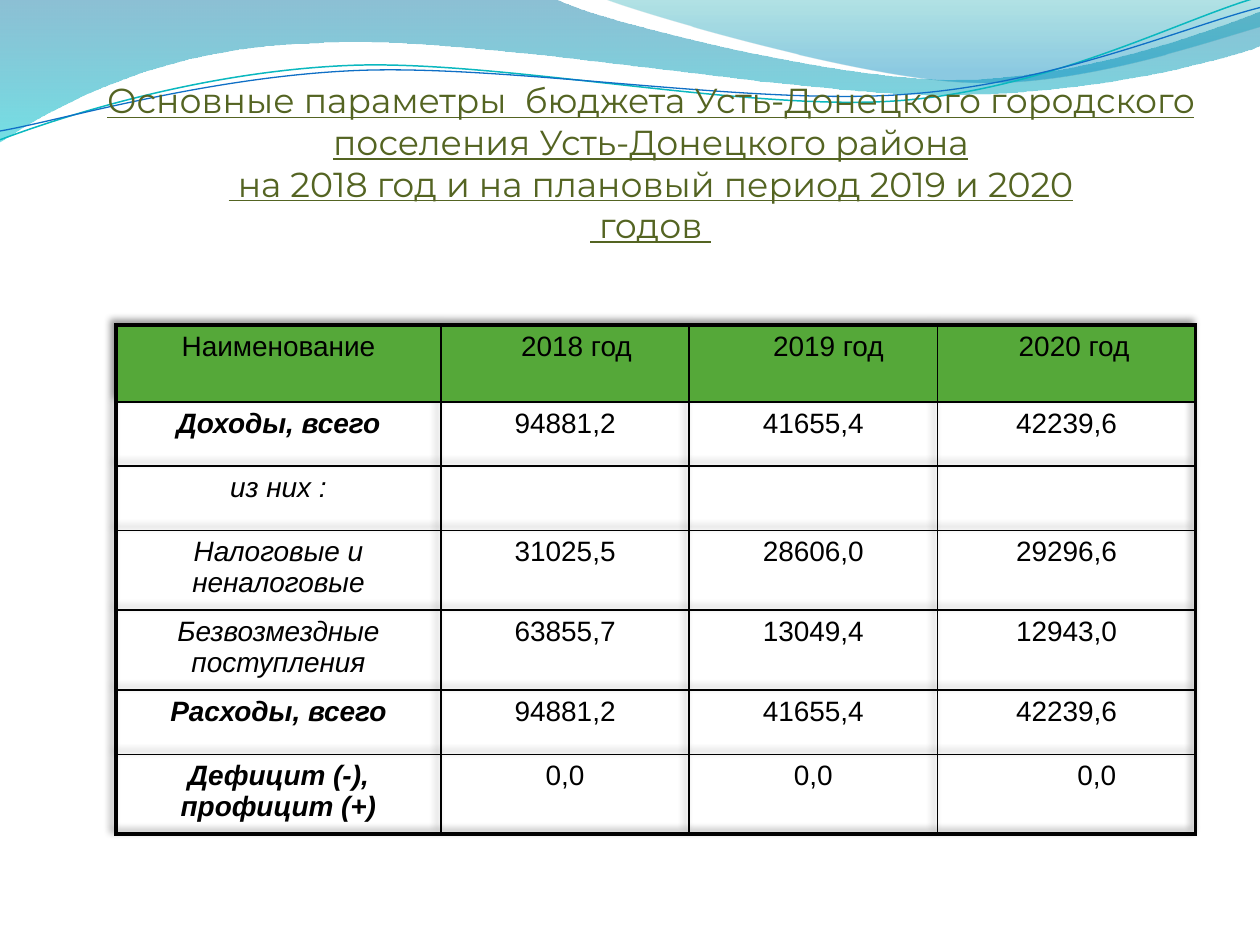
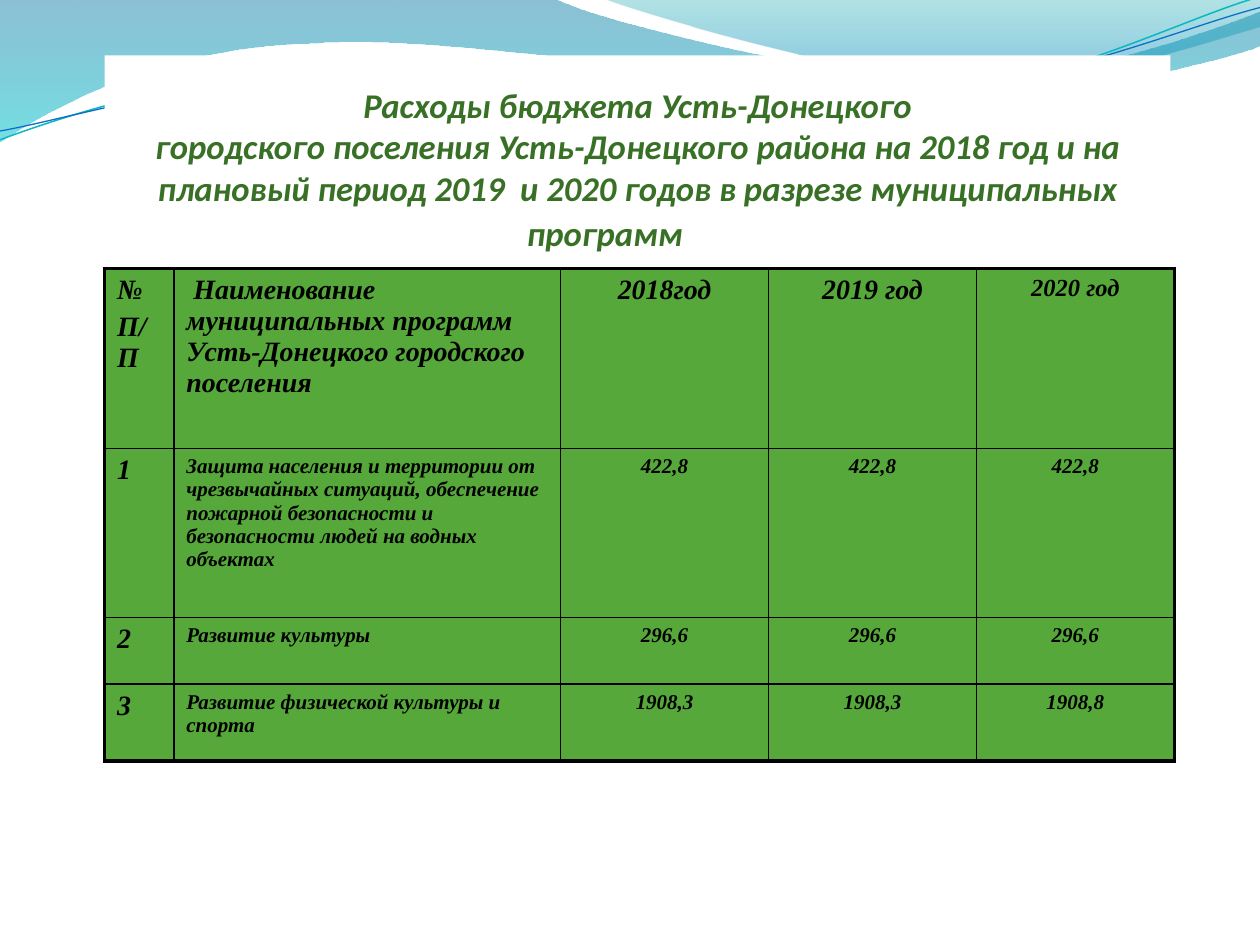
from lxml.etree import SubElement
from itertools import product

from pptx import Presentation
from pptx.dml.color import RGBColor
from pptx.enum.text import MSO_ANCHOR as Anchor, PP_ALIGN as Align
from pptx.oxml import parse_xml
from pptx.oxml.ns import nsdecls, qn
from pptx.util import Inches, Pt

SLIDE_WIDTH, SLIDE_HEIGHT = Inches(10), Inches(7.5)
COLUMN = SLIDE_WIDTH // 10

WHITE = RGBColor(0xFF, 0xFF, 0xFF)
BLACK = RGBColor(0x00, 0x00, 0x00)
CELL_GREEN = RGBColor(0x55, 0xA8, 0x39)
OLIVE = RGBColor(0x54, 0x64, 0x22)
LEAF_GREEN = RGBColor(0x38, 0x70, 0x26)
DEEP_BLUE = RGBColor(0x00, 0x74, 0xA1)
CYAN = RGBColor(0x00, 0xC6, 0xCF)
TEAL = RGBColor(0x00, 0xA1, 0xA9)
SKY_BLUE = RGBColor(0x00, 0x8B, 0xBF)
LINE_TEAL = RGBColor(0x0A, 0xB8, 0xBF)
LINE_BLUE = RGBColor(0x0F, 0x6F, 0xC6)

INNER_BORDER, OUTER_BORDER = Pt(1), Pt(2.25)
SPACE_WIDTH = 0.06

BANDS = [
    ([[(0, 0)], [(4.4, -0.01)],
      [(4.76, 0.17), (6.64, 0.63), (7.58, 0.63)],
      [(8.53, 0.63), (9.58, 0.26), (10, 0.09)], [(10.01, 0.36)],
      [(9.83, 0.44), (8.7, 0.76), (7.46, 0.75)],
      [(6.22, 0.75), (3.82, 0.28), (2.57, 0.34)],
      [(1.29, 0.36), (0.46, 0.83), (-0.01, 1.13)], [(0, 0)]],
     [(0, DEEP_BLUE, 45), (1, CYAN, 55)]),
    ([[(4.79, -0.01)],
      [(5.09, 0.11), (6.82, 0.62), (7.69, 0.65)],
      [(8.56, 0.69), (9.61, 0.32), (10, 0.21)], [(10, 0)], [(4.79, -0.01)]],
     [(0, TEAL, 30), (0.8, SKY_BLUE, 45)]),
]
WAVES = [
    ([[(0, 1.11)],
      [(0.48, 0.93), (1.58, 0.57), (2.77, 0.52)],
      [(3.95, 0.47), (5.93, 0.89), (7.13, 0.8)],
      [(8.33, 0.71), (9.38, 0.15), (9.98, -0.02)]], LINE_TEAL, Pt(0.85)),
    ([[(0, 1.04)],
      [(0.47, 0.96), (1.64, 0.61), (2.83, 0.56)],
      [(4.03, 0.51), (5.97, 0.84), (7.17, 0.75)],
      [(8.36, 0.67), (9.41, 0.21), (10, 0.06)]], LINE_BLUE, Pt(0.75)),
]

BUDGET_TITLE = [
    "Основные параметры  бюджета Усть-Донецкого городского "
    "поселения Усть-Донецкого района\n"
    " на 2018 год и на плановый период 2019 и 2020\n годов "]
BUDGET_ROWS = [
    ["Наименование", "2018 год", "2019 год", "2020 год"],
    ["Доходы, всего", "94881,2", "41655,4", "42239,6"],
    ["из них :", "", "", ""],
    ["Налоговые и неналоговые", "31025,5", "28606,0", "29296,6"],
    ["Безвозмездные поступления", "63855,7", "13049,4", "12943,0"],
    ["Расходы, всего", "94881,2", "41655,4", "42239,6"],
    ["Дефицит (-), профицит (+)", "0,0", "0,0", "0,0"],
]
BUDGET_TOTALS = (1, 5, 6)
BUDGET_INDENTS = {(0, 1): 3, (0, 2): 4, (0, 3): 2, (6, 3): 8}

PROGRAM_TITLE = [
    "Расходы бюджета Усть-Донецкого\nгородского поселения Усть-Донецкого "
    "района на 2018 год и на плановый период 2019  и 2020 годов "
    "в разрезе муниципальных",
    "программ"]
PROGRAM_ROWS = [
    ["№\nП/П",
     " Наименование муниципальных программ Усть-Донецкого городского поселения",
     "2018год", "2019 год", "2020 год"],
    ["1", "Защита населения и территории от чрезвычайных ситуаций, обеспечение "
     "пожарной безопасности и безопасности людей на водных объектах",
     "422,8", "422,8", "422,8"],
    ["2", "Развитие культуры", "296,6", "296,6", "296,6"],
    ["3", "Развитие физической культуры и спорта", "1908,3", "1908,3", "1908,8"],
]


def grid(*columns):
    """Turn lengths in grid columns into slide units."""
    return [round(COLUMN * value) for value in columns]


def format_runs(paragraph, color, **values):
    """Apply one set of font values to every run."""
    for run in paragraph.runs:
        run.font.color.rgb = color
        for name, value in values.items():
            setattr(run.font, name, value)


def add_outline(slide, segments):
    """Draw a freeform of straight and cubic segments."""
    start, *rest = [grid(*point) for segment in segments for point in segment]
    builder = slide.shapes.build_freeform(*start)
    builder.add_line_segments(rest, close=segments[0] == segments[-1])
    shape = builder.convert_to_shape()
    shape.shadow.inherit = False
    steps = iter(list(shape.element.iter(qn("a:lnTo"))))
    for segment in segments[1:]:
        group = [next(steps) for _ in segment]
        if len(group) == 3:
            group[0].tag = qn("a:cubicBezTo")
            for step in group[1:]:
                group[0].append(step[0])
                step.getparent().remove(step)
    return shape


def add_band(slide, segments, stops):
    """Draw a translucent gradient band."""
    shape = add_outline(slide, segments)
    shape.line.fill.background()
    shape.fill.gradient()
    shape.fill.gradient_angle = 270
    for stop, (position, color, _) in zip(shape.fill.gradient_stops, stops):
        stop.position = position
        stop.color.rgb = color
    colors = list(shape.element.spPr.iter(qn("a:srgbClr")))
    for element, (_, _, opacity) in zip(colors, stops):
        SubElement(element, qn("a:alpha"), val=str(opacity * 1000))
    return shape


def add_wave(slide, segments, color, width):
    """Draw a thin curved line."""
    shape = add_outline(slide, segments)
    shape.fill.background()
    shape.line.color.rgb = color
    shape.line.width = width
    return shape


def decorate_master(presentation, slide):
    """Draw the shared waves and move them to the slide master."""
    shapes = [add_band(slide, *band) for band in BANDS]
    shapes += [add_wave(slide, *wave) for wave in WAVES]
    tree = presentation.slide_master.shapes.element
    for index, shape in enumerate(shapes):
        tree.insert(2 + index, shape.element)


def add_title(slide, box, texts, color, **font):
    """Add a centred title that sits on the bottom of its box."""
    shape = slide.shapes.add_textbox(*grid(*box))
    frame = shape.text_frame
    settings = {"word_wrap": True, "vertical_anchor": Anchor.BOTTOM, "margin_left": 0,
                "margin_right": 0, "margin_bottom": 0}
    for name, value in settings.items():
        setattr(frame, name, value)
    for index, text in enumerate(texts):
        paragraph = frame.add_paragraph() if index else frame.paragraphs[0]
        paragraph.text = text
        paragraph.alignment = Align.CENTER
        format_runs(paragraph, color, size=Pt(19.8), **font)
    return shape


def set_borders(cell, outer_sides):
    """Draw four borders, heavier on the outer sides."""
    properties = cell._tc.get_or_add_tcPr()
    for index, side in enumerate("LRTB"):
        width = OUTER_BORDER if side in outer_sides else INNER_BORDER
        properties.insert(index, parse_xml(
            f'<a:ln{side} {nsdecls("a")} w="{width}"><a:solidFill>'
            f'<a:srgbClr val="{BLACK}"/></a:solidFill></a:ln{side}>'))


def fill_cell(cell, text, align, fill, indent, **font):
    """Write and colour one cell."""
    cell.text = text
    if indent:
        cell.margin_left = grid(0.1 + indent * SPACE_WIDTH)[0]
    for paragraph in cell.text_frame.paragraphs:
        paragraph.alignment = align
        spacing = SubElement(paragraph._p.get_or_add_pPr(), qn("a:spcBef"))
        SubElement(spacing, qn("a:spcPct"), val="20000")
        format_runs(paragraph, BLACK, **font)
    if fill is None:
        cell.fill.background()
    else:
        cell.fill.solid()
        cell.fill.fore_color.rgb = fill


def add_grid_table(slide, corner, widths, heights, rows, cell_format):
    """Add a table whose cells follow one formatting rule."""
    size = (sum(widths), sum(heights))
    frame = slide.shapes.add_table(len(heights), len(widths), *grid(*corner, *size))
    table = frame.table
    table.first_row = table.horz_banding = False
    for column, width in zip(table.columns, grid(*widths)):
        column.width = width
    for row, height in zip(table.rows, grid(*heights)):
        row.height = height
    last_row, last_column = len(heights) - 1, len(widths) - 1
    for row, column in product(range(len(heights)), range(len(widths))):
        cell = table.cell(row, column)
        fill_cell(cell, rows[row][column], **cell_format(row, column))
        edges = {"L": column == 0, "R": column == last_column,
                 "T": row == 0, "B": row == last_row}
        set_borders(cell, [side for side, outer in edges.items() if outer])
    return table


def add_table_shadow(table):
    """Give the table a soft shadow toward the upper left."""
    table._tbl.tblPr.insert(0, parse_xml(
        f'<a:effectLst {nsdecls("a")}><a:outerShdw blurRad="50800" dist="38100" '
        f'dir="13500000" algn="br" rotWithShape="0"><a:srgbClr val="{BLACK}">'
        '<a:alpha val="40000"/></a:srgbClr></a:outerShdw></a:effectLst>'))


def budget_format(row, column):
    """Format a cell of the budget table."""
    label = row > 0 and column == 0
    return {"align": Align.CENTER, "fill": None if row else CELL_GREEN,
            "indent": BUDGET_INDENTS.get((row, column), 0),
            "name": "Arial", "size": Pt(16), "italic": label,
            "bold": label and row in BUDGET_TOTALS}


def program_format(row, column):
    """Format a cell of the programme table."""
    size = 16 if row == 0 or column == 0 else 12
    if (row, column) == (0, 4):
        size = 14
    return {"align": Align.LEFT if column < 2 else Align.CENTER, "fill": CELL_GREEN,
            "indent": 0, "name": "Times New Roman", "size": Pt(size),
            "bold": True, "italic": True}


def build_budget_slide(slide):
    """Build the slide with the main budget figures."""
    add_title(slide, (0.83, 0.31, 8.67, 1.64), BUDGET_TITLE, OLIVE,
              name="Montserrat", underline=True)
    table = add_grid_table(slide, (0.92, 2.58), [2.58, 1.97, 1.97, 2.05],
                           [0.61] + [0.51] * 6, BUDGET_ROWS, budget_format)
    add_table_shadow(table)


def build_program_slide(slide):
    """Build the slide with spending by programme."""
    title = add_title(slide, (0.83, 0.44, 8.46, 1.57), PROGRAM_TITLE, LEAF_GREEN,
                      name="Calibri", bold=True, italic=True)
    title.fill.solid()
    title.fill.fore_color.rgb = WHITE
    last_line = title.text_frame.paragraphs[-1]
    last_line.space_before = Pt(1.8)
    last_line._p.get_or_add_pPr().set("marR", str(grid(0.52)[0]))
    add_grid_table(slide, (0.83, 2.13), [0.55, 3.07, 1.65, 1.65, 1.57],
                   [1.43, 1.34, 0.53, 0.61], PROGRAM_ROWS, program_format)


def main():
    """Build and save the presentation."""
    presentation = Presentation()
    presentation.slide_width, presentation.slide_height = SLIDE_WIDTH, SLIDE_HEIGHT
    blank = presentation.slide_layouts[6]
    budget, program = [presentation.slides.add_slide(blank) for _ in range(2)]
    decorate_master(presentation, budget)
    build_budget_slide(budget)
    build_program_slide(program)
    presentation.save("out.pptx")


if __name__ == "__main__":
    main()
